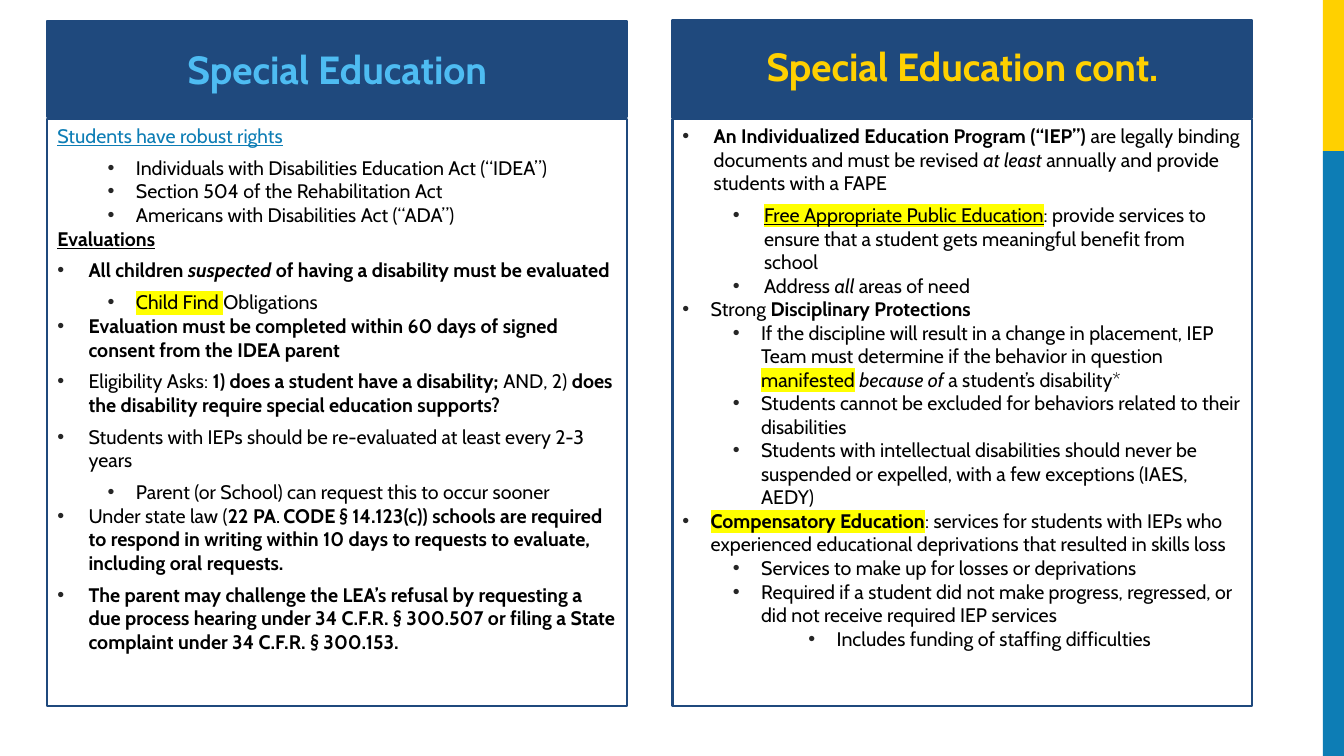
from lxml.etree import SubElement
from pptx import Presentation
from pptx.dml.color import RGBColor
from pptx.enum.shapes import MSO_SHAPE as Shape
from pptx.enum.text import MSO_ANCHOR as Anchor, PP_ALIGN as Align
from pptx.oxml.ns import qn
from pptx.util import Inches, Pt

NAVY, BLUE, SKY, GOLD = "1F497D", "0D7DB5", "4EBCF2", "FFD000"
BLACK, GREY, MARK = "000000", "262626", "FFFF00"
FONT = "Cabin"
WIDE = 5.75
LEFT, RIGHT = 0.47, 6.67

# Paragraph kinds: level, left indent, hanging indent, space after
KINDS = {
    "head": (0, 0, 0, 6),
    "wide": (0, 0.31, 0.31, 6),
    "main": (0, 0.28, 0.28, 0),
    "part": (1, 0.81, 0.31, 0),
    "sub": (1, 0.78, 0.28, 0),
    "deep": (2, 1.53, 0.28, 0),
}

# Run styles: b bold, i italic, u underline, h highlight, s small caps, l link blue
RIGHTS = [
    ("head", ("Students have robust rights", "ul")),
    ("sub", ("Individuals with Disabilities Education Act (“IDEA”)", "")),
    ("sub", ("Section 504 of the Rehabilitation Act", "")),
    ("sub", ("Americans with Disabilities Act (“ADA”)", "")),
    ("head", ("Evaluations", "bu")),
    ("wide", ("All children ", "b"), ("suspected ", "bi"),
     ("of having a disability must be evaluated", "b")),
    ("sub", ("Child Find ", "h"), ("Obligations", "")),
    ("wide", ("Evaluation must be completed within 60 days of signed "
              "consent from the IDEA parent", "b")),
    ("wide", ("Eligibility Asks: ", ""),
     ("1) does a student have a disability; ", "b"), ("AND, 2) ", ""),
     ("does the disability require special education supports?", "b")),
    ("wide", ("Students with IEPs should be re-evaluated at least every "
              "2-3 years", "")),
    ("sub", ("Parent (or School) can request this to occur sooner", "")),
    ("wide", ("Under state law (", ""), ("22 ", "b"), ("PA. CODE ", "bs"),
     ("§ 14.123(c)) schools are required to respond in writing within "
      "10 days to requests to evaluate, including oral requests.", "b")),
    ("wide", ("The parent may challenge the LEA’s refusal by requesting a due "
              "process hearing under 34 C.F.R. § 300.507 or filing a State "
              "complaint under 34 C.F.R. § 300.153.", "b")),
]
PLANS = [
    ("wide", ("An Individualized Education Program (“IEP”)", "b"),
     (" are legally binding documents and must be revised ", ""),
     ("at least ", "i"), ("annually and provide students with a FAPE", "")),
    ("part", ("Free Appropriate Public Education", "uh"),
     (": provide services to ensure that a student gets meaningful "
      "benefit from school", "")),
    ("part", ("Address ", ""), ("all ", "i"), ("areas of need", "")),
    ("main", ("Strong ", ""), ("Disciplinary Protections", "b")),
    ("sub", ("If the discipline will result in a change in placement, IEP Team "
             "must determine if the behavior in question ", ""),
     ("manifested", "h"), (" ", ""), ("because of ", "i"),
     ("a student’s disability*", "")),
    ("sub", ("Students cannot be excluded for behaviors related to their "
             "disabilities", "")),
    ("sub", ("Students with intellectual disabilities should never be suspended "
             "or expelled, with a few exceptions (IAES, AEDY)", "")),
    ("main", ("Compensatory Education", "bh"),
     (": services for students with IEPs who experienced educational "
      "deprivations that resulted in skills loss", "")),
    ("sub", ("Services to make up for losses or deprivations", "")),
    ("sub", ("Required if a student did not make progress, regressed, or did "
             "not receive required IEP services", "")),
    ("deep", ("Includes funding of staffing difficulties", "")),
]


def rgb(code):
    return RGBColor.from_string(code)


def add_box(slide, place, fill=None, line=None):
    box = slide.shapes.add_shape(Shape.RECTANGLE, *map(Inches, place))
    box.shadow.inherit = False
    if fill:
        box.fill.solid()
        box.fill.fore_color.rgb = rgb(fill)
    else:
        box.fill.background()
    if line:
        box.line.color.rgb = rgb(line)
        box.line.width = Pt(1.5)
    else:
        box.line.fill.background()
    box.text_frame.word_wrap = True
    return box


def add_run(para, text, style, size=14, color=BLACK):
    run = para.add_run()
    run.text = text
    font = run.font
    font.size = Pt(size)
    font.bold = "b" in style
    font.italic = "i" in style
    font.underline = "u" in style
    font.color.rgb = rgb(BLUE if "l" in style else color)
    props = run._r.get_or_add_rPr()
    if "h" in style:
        mark = SubElement(props, qn("a:highlight"))
        SubElement(mark, qn("a:srgbClr"), val=MARK)
    if "s" in style:
        props.set("cap", "small")
    font.name = FONT


def set_kind(para, kind):
    """Give the paragraph its level, indents, bullet and spacing."""
    level, left, hang, after = KINDS[kind]
    para.alignment = Align.LEFT
    para.level = level
    para.space_after = Pt(after)
    props = para._p.get_or_add_pPr()
    props.set("marL", str(Inches(left)))
    props.set("indent", str(-Inches(hang)))
    if hang:
        tint = SubElement(props, qn("a:buClr"))
        SubElement(tint, qn("a:srgbClr"), val=GREY)
        SubElement(props, qn("a:buFont"), typeface="Arial")
        SubElement(props, qn("a:buChar"), char="•")


def add_list(slide, left, items):
    frame = add_box(slide, (left, 1.18, WIDE, 5.82), line=NAVY).text_frame
    frame.vertical_anchor = Anchor.TOP
    for num, (kind, *runs) in enumerate(items):
        para = frame.add_paragraph() if num else frame.paragraphs[0]
        set_kind(para, kind)
        for text, style in runs:
            add_run(para, text, style)


def add_title(slide, place, text, color, space=1.0):
    frame = add_box(slide, place, NAVY, NAVY).text_frame
    frame.vertical_anchor = Anchor.MIDDLE
    para = frame.paragraphs[0]
    para.alignment = Align.CENTER
    para.line_spacing = space
    add_run(para, text, "b", 28, color)


def main():
    deck = Presentation()
    deck.slide_width, deck.slide_height = Inches(13.33), Inches(7.5)
    slide = deck.slides.add_slide(deck.slide_layouts[6])
    add_box(slide, (13.12, 0, 0.21, 1.5), GOLD)
    add_box(slide, (13.12, 1.5, 0.21, 6), BLUE)
    add_list(slide, RIGHT, PLANS)
    add_title(slide, (RIGHT, 0.2, WIDE, 0.97), "Special Education cont.", GOLD, 0.9)
    add_title(slide, (LEFT, 0.21, WIDE, 0.95), "Special Education", SKY)
    add_list(slide, LEFT, RIGHTS)
    deck.save("out.pptx")


if __name__ == "__main__":
    main()
